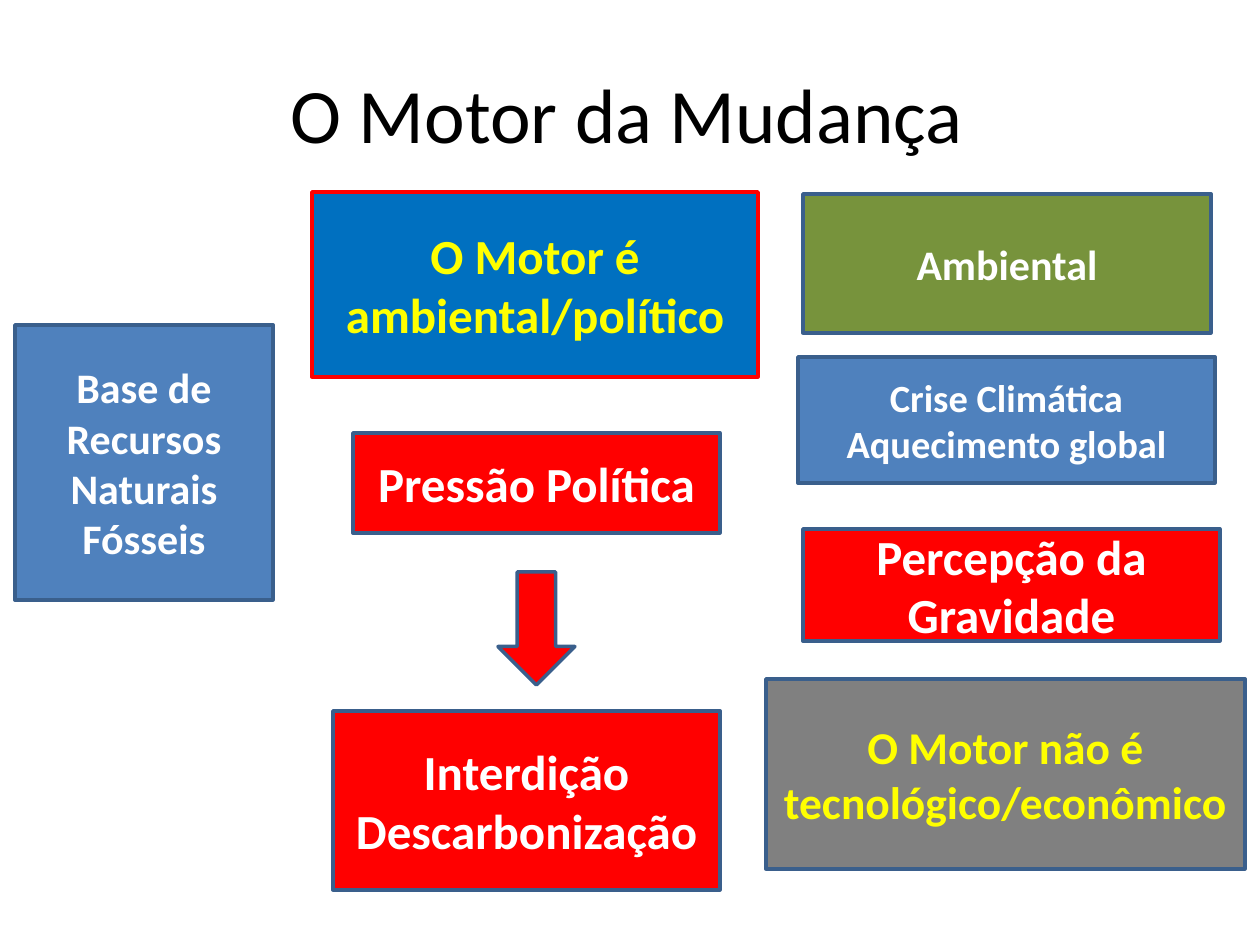
from dataclasses import dataclass

from pptx import Presentation
from pptx.dml.color import RGBColor
from pptx.enum.shapes import MSO_SHAPE
from pptx.enum.text import MSO_ANCHOR, PP_ALIGN
from pptx.util import Emu, Pt

RECT = MSO_SHAPE.RECTANGLE
DOWN_ARROW = MSO_SHAPE.DOWN_ARROW
MIDDLE = MSO_ANCHOR.MIDDLE
CENTER = PP_ALIGN.CENTER

EMU_PER_PX = 914400 / 126
FONT = "Calibri"
WHITE, BLACK, YELLOW = "FFFFFF", "000000", "FFFF00"
RED, BLUE, DEEP_BLUE = "FF0000", "4F81BD", "0070C0"
GREEN, GRAY, OUTLINE = "77933C", "808080", "3A5F8C"


@dataclass
class Block:
    left: int
    top: int
    width: int
    height: int
    fill: str
    text: str = ""
    size: int = 28
    color: str = WHITE
    line: str = OUTLINE
    kind: MSO_SHAPE = RECT


BLOCKS = [
    Block(15, 325, 258, 275, BLUE, "Base de Recursos Naturais Fósseis", 24),
    Block(333, 711, 387, 179, RED, "Interdição\nDescarbonização"),
    Block(798, 357, 417, 126, BLUE, "Crise Climática\nAquecimento global", 22),
    Block(803, 194, 408, 139, GREEN, "Ambiental", 24),
    Block(353, 433, 367, 100, RED, "Pressão Política"),
    Block(803, 529, 417, 112, RED, "Percepção da Gravidade"),
    Block(498, 572, 77, 113, RED, kind=DOWN_ARROW),
    Block(312, 192, 446, 185, DEEP_BLUE, "O Motor é ambiental/político",
          color=YELLOW, line=RED),
    Block(766, 679, 479, 190, GRAY, "O Motor não é tecnológico/econômico",
          26, YELLOW),
]


def px(n: int) -> Emu:
    return Emu(round(n * EMU_PER_PX))


def rgb(color: str) -> RGBColor:
    return RGBColor.from_string(color)


def write(sp, text: str, *, size: int, color: str, bold: bool = False) -> None:
    """Fill the shape with centred text, one paragraph a line."""
    tf = sp.text_frame
    tf.word_wrap = True
    tf.vertical_anchor = MIDDLE
    for i, line in enumerate(text.split("\n")):
        p = tf.add_paragraph() if i else tf.paragraphs[0]
        p.alignment = CENTER
        r = p.add_run()
        r.text = line
        r.font.name = FONT
        r.font.size = Pt(size)
        r.font.bold = bold
        r.font.color.rgb = rgb(color)


def draw_block(s, b: Block) -> None:
    sp = s.shapes.add_shape(b.kind, px(b.left), px(b.top), px(b.width), px(b.height))
    sp.shadow.inherit = False
    sp.fill.solid()
    sp.fill.fore_color.rgb = rgb(b.fill)
    sp.line.color.rgb = rgb(b.line)
    sp.line.width = Pt(2)
    if b.text:
        write(sp, b.text, size=b.size, color=b.color, bold=True)


def main() -> None:
    prs = Presentation()
    prs.slide_width, prs.slide_height = px(1260), px(945)
    s = prs.slides.add_slide(prs.slide_layouts[6])
    title = s.shapes.add_textbox(px(60), px(34), px(1134), px(158))
    write(title, "O Motor da Mudança", size=44, color=BLACK)
    for block in BLOCKS:
        draw_block(s, block)
    prs.save("out.pptx")


if __name__ == "__main__":
    main()
